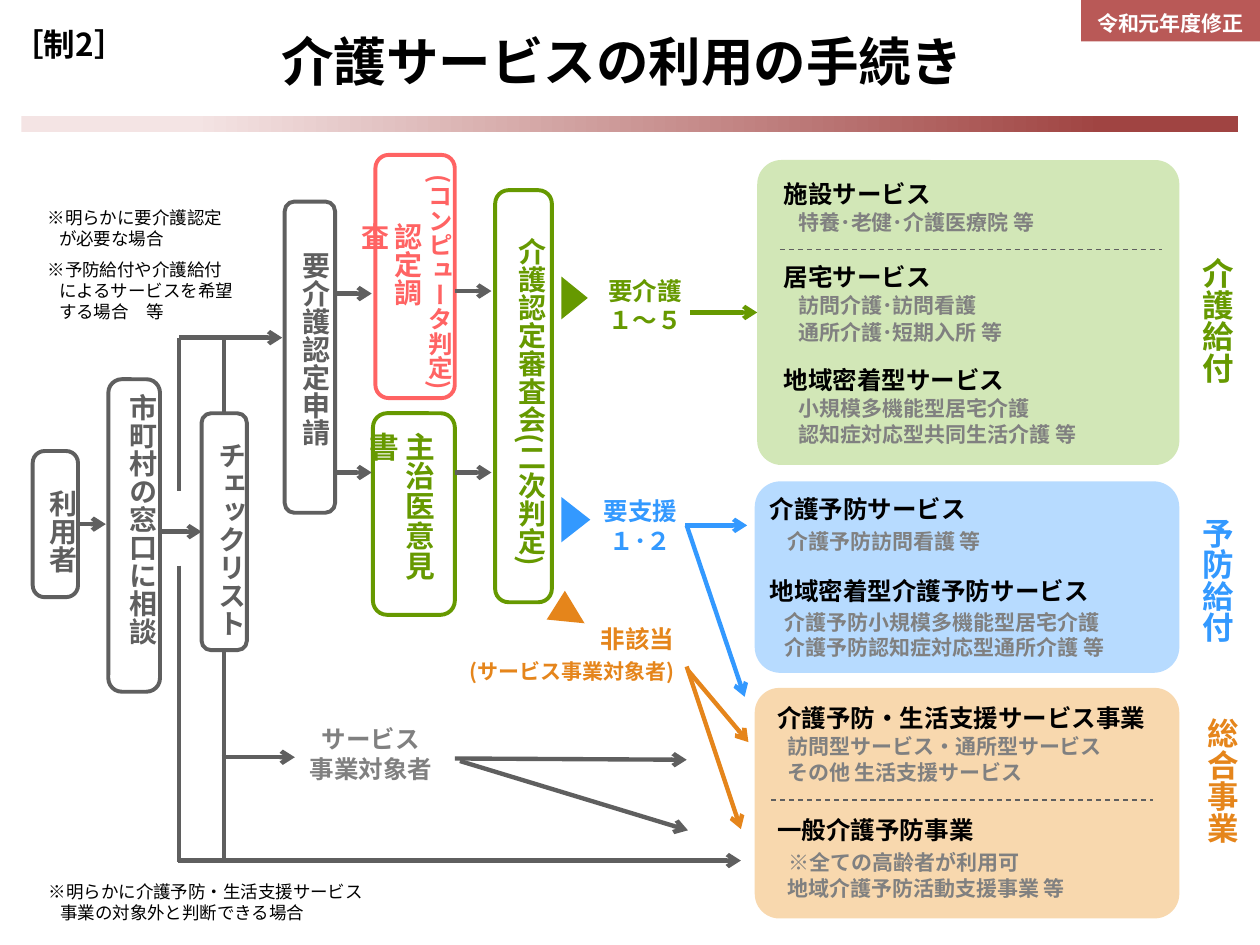
from dataclasses import dataclass

import pptx
import pptx.dml.color
import pptx.enum.dml
import pptx.enum.shapes
import pptx.enum.text
import pptx.oxml.ns
import pptx.oxml.xmlchemy
import pptx.util

SHAPES = pptx.enum.shapes.MSO_SHAPE
ALIGN = pptx.enum.text.PP_ALIGN
Pt = pptx.util.Pt
qn = pptx.oxml.ns.qn
element = pptx.oxml.xmlchemy.OxmlElement


@dataclass(frozen=True)
class Theme:
    font: str = "Noto Sans CJK JP"
    black: str = "000000"
    white: str = "FFFFFF"
    slate: str = "5F5F5F"
    gray: str = "808080"
    green: str = "669900"
    blue: str = "3399FF"
    orange: str = "E5851B"
    red: str = "FF6363"
    pale_green: str = "D2E7B7"
    pale_blue: str = "B7DBFF"
    pale_orange: str = "F8D8AE"
    badge: str = "B95957"
    band_start: str = "F4E4E4"
    band_end: str = "A04442"
    title: int = 30
    label: int = 18
    opinion: int = 17
    step: int = 16
    heading: int = 14
    detail: int = 12
    note: int = 10
    flow: float = 2.5
    outline: float = 2.25
    divider: float = 0.75


class Deck:
    """Draws styled elements on the current slide, in a grid of 100 columns by 75 rows."""

    def __init__(self, theme):
        self.theme = theme
        self.file = pptx.Presentation()
        self.file.slide_width = pptx.util.Inches(10)
        self.file.slide_height = pptx.util.Inches(7.5)
        self.slide = self.file.slides.add_slide(self.file.slide_layouts[6])

    def grid(self, *cells):
        return [round(cell * self.file.slide_width / 100) for cell in cells]

    def color(self, code):
        return pptx.dml.color.RGBColor.from_string(code)

    def shape(self, kind, place, fill=None, line=None, round_by=None, turn=0):
        shape = self.slide.shapes.add_shape(kind, *self.grid(*place))
        shape.shadow.inherit = False
        shape.rotation = turn
        if round_by is not None:
            shape.adjustments[0] = round_by
        if fill:
            shape.fill.solid()
            shape.fill.fore_color.rgb = self.color(fill)
        else:
            shape.fill.background()
        if line:
            shape.line.color.rgb = self.color(line)
            shape.line.width = Pt(self.theme.outline)
        else:
            shape.line.fill.background()
        return shape

    def band(self, place):
        band = self.shape(SHAPES.RECTANGLE, place)
        band.fill.gradient()
        band.fill.gradient_angle = 0
        ends = (0.14, self.theme.band_start), (0.89, self.theme.band_end)
        for stop, (position, code) in zip(band.fill.gradient_stops, ends):
            stop.position = position
            stop.color.rgb = self.color(code)

    def line(self, start, end, color, arrow=True, dashed=False, leaves=None, enters=None):
        line = self.slide.shapes.add_connector(
            pptx.enum.shapes.MSO_CONNECTOR.STRAIGHT, *self.grid(*start, *end))
        if leaves:
            line.begin_connect(*leaves)
        if enters:
            line.end_connect(*enters)
        line.line.color.rgb = self.color(color)
        line.line.width = Pt(self.theme.divider if dashed else self.theme.flow)
        if dashed:
            line.line.dash_style = pptx.enum.dml.MSO_LINE.DASH
        properties = line._element.spPr
        if arrow:
            tail = element("a:tailEnd")
            tail.set("type", "arrow")
            properties.find(qn("a:ln")).append(tail)
        properties.append(element("a:effectLst"))

    def paragraph(self, paragraph, words, size, color, bold=True, align=None,
                  before=None, percent=None, after=None, indent=0, spacing=None):
        paragraph.alignment = align
        paragraph.line_spacing = spacing
        if before is not None or percent:
            paragraph.space_before = Pt(before or 0)
        if after is not None:
            paragraph.space_after = Pt(after)
        properties = paragraph._p.get_or_add_pPr()
        if percent:
            gap = properties.find(qn("a:spcBef"))
            gap.remove(gap[0])
            share = element("a:spcPct")
            share.set("val", str(percent * 1000))
            gap.append(share)
        if indent:
            properties.set("marL", str(self.grid(indent)[0]))
            properties.set("indent", "0")
        run = paragraph.add_run()
        run.text = words
        run.font.size = Pt(size)
        run.font.bold = bold
        run.font.color.rgb = self.color(color)
        run.font.name = self.theme.font
        east = element("a:ea")
        east.set("typeface", self.theme.font)
        run._r.get_or_add_rPr().append(east)

    def text(self, place, lines, vertical=False, grow=True, **style):
        frame = self.slide.shapes.add_textbox(*self.grid(*place)).text_frame
        frame.word_wrap = True
        if vertical:
            frame._txBody.bodyPr.set("vert", "eaVert")
        if grow:
            frame.auto_size = pptx.enum.text.MSO_AUTO_SIZE.SHAPE_TO_FIT_TEXT
        else:
            frame.vertical_anchor = pptx.enum.text.MSO_ANCHOR.MIDDLE
        for number, (words, own) in enumerate(lines):
            paragraph = frame.add_paragraph() if number else frame.paragraphs[0]
            self.paragraph(paragraph, words, **{**style, **own})

    def tall(self, place, words, size, color, **style):
        self.text(place, [(words, {})], vertical=True, size=size, color=color,
                  **(style or {"percent": 50}))

    def tag(self, place, words):
        tag = self.shape(SHAPES.RECTANGLE, place, self.theme.badge)
        frame = tag.text_frame
        frame.margin_left = frame.margin_right = self.grid(0.8)[0]
        frame.margin_top = frame.margin_bottom = self.grid(0.4)[0]
        frame.vertical_anchor = pptx.enum.text.MSO_ANCHOR.MIDDLE
        self.paragraph(frame.paragraphs[0], words, self.theme.detail, self.theme.white,
                       align=ALIGN.CENTER, spacing=Pt(16.8))


def head(words, **gap):
    return words, {"size": THEME.heading, "color": THEME.black, **(gap or {"percent": 5})}


def item(words, indent=1.2, **gap):
    return words, {"size": THEME.detail, "color": THEME.gray, "indent": indent,
                   **(gap or {"percent": 5})}


def main():
    t, deck = THEME, Deck(THEME)
    deck.text((4.4, 1.7, 90, 6.2), [("介護サービスの利用の手続き", {})], grow=False,
              size=t.title, color=t.black, align=ALIGN.CENTER)
    deck.band((1.7, 9.2, 96.6, 1.3))
    deck.text((0, 0, 13.1, 5.6), [("［制2］", {})], size=t.label, color=t.black, spacing=1.5)
    deck.tag((85.8, 0, 14.2, 3.3), "令和元年度修正")

    care, prevention, general = [
        deck.shape(SHAPES.ROUNDED_RECTANGLE, place, fill, round_by=curve)
        for place, fill, curve in (
            ((60.1, 12.7, 33.5, 24.2), t.pale_green, 0.079),
            ((59.9, 38.2, 33.7, 15.2), t.pale_blue, 0.134),
            ((59.9, 54.6, 33.7, 18.3), t.pale_orange, 0.107))]
    user, window, checklist, application, survey, opinion, board = [
        deck.shape(SHAPES.ROUNDED_RECTANGLE, place, line=color, round_by=curve)
        for place, color, curve in (
            ((2.6, 35.8, 3.6, 11.6), t.slate, 0.262),
            ((8.6, 30.1, 4.1, 24.8), t.slate, 0.261),
            ((16, 32.8, 3.6, 18.8), t.slate, 0.208),
            ((22.6, 16, 4, 24.7), t.slate, 0.191),
            ((29.8, 12.3, 6.3, 19.3), t.red, 0.166),
            ((29.6, 32.8, 6.5, 16), t.green, 0.173),
            ((39.3, 15.1, 4.5, 32.7), t.green, 0.237))]

    deck.tall((2.1, 37.9, 4.7, 9.7), "利用者", t.step, t.slate)
    deck.tall((8.4, 30.3, 4.7, 24.7), "市町村の窓口に相談", t.step, t.slate,
              percent=50, align=ALIGN.CENTER)
    deck.tall((15.5, 34.1, 4.7, 17.8), "チェックリスト", t.step, t.slate)
    deck.tall((22.2, 19, 4.7, 17.7), "要介護認定申請", t.step, t.slate)
    deck.tall((30.3, 33.3, 4.9, 15.8), "主治医意見書", t.opinion, t.green)
    deck.tall((32.2, 12.9, 4.4, 19.8), "(コンピュータ判定)", t.heading, t.red)
    deck.tall((29.5, 16.7, 4.7, 10.4), "認定調査", t.step, t.red)
    deck.tall((39.3, 17.9, 4.7, 29.7), "介護認定審査会(二次判定)", t.step, t.green)
    deck.tall((93.6, 19.5, 5, 12.7), "介護給付", t.label, t.green)
    deck.tall((93.6, 40.1, 5, 13), "予防給付", t.label, t.blue)
    deck.tall((93.9, 56, 4.9, 14.5), "総合事業", t.label, t.orange,
              align=ALIGN.CENTER, spacing=0.95)

    for place, names, color in (
            ((46.6, 21.4, 9.2, 5.7), ("要介護", "１～５"), t.green),
            ((45.5, 38.9, 10.7, 5.7), ("要支援", "１･２"), t.blue),
            ((22.8, 57, 13.3, 5.7), ("サービス", "事業対象者"), t.gray)):
        deck.text(place, [(name, {}) for name in names], size=t.heading, color=color,
                  align=ALIGN.CENTER)
    deck.text((35.3, 49, 19.2, 5.8),
              [("非該当", {"after": 3}), ("(サービス事業対象者)", {"size": t.detail})],
              size=t.heading, color=t.orange, align=ALIGN.RIGHT)
    for place, color, turn in (((43.9, 22.6, 3.4, 2.1), t.green, 90),
                               ((43.9, 40.1, 3.6, 2.3), t.blue, 90),
                               ((43.9, 47.4, 2.7, 2.7), t.orange, 122.3)):
        deck.shape(SHAPES.ISOSCELES_TRIANGLE, place, color, turn=turn)

    deck.text((61.2, 13.7, 30.3, 22.6), [
        head("施設サービス"), item("特養･老健･介護医療院 等"),
        head("居宅サービス", before=16), item("訪問介護･訪問看護"), item("通所介護･短期入所 等"),
        head("地域密着型サービス", before=12), item("小規模多機能型居宅介護"),
        item("認知症対応型共同生活介護 等")])
    deck.text((60.1, 38.7, 33.5, 14.2), [
        head("介護予防サービス"), item("介護予防訪問看護 等", 1.4, before=3),
        head("地域密着型介護予防サービス", before=13),
        item("介護予防小規模多機能型居宅介護", before=2),
        item("介護予防認知症対応型通所介護 等", before=0)])
    deck.text((60.7, 55.3, 33.5, 17), [
        head("介護予防・生活支援サービス事業"), item("訪問型サービス・通所型サービス", 0.8),
        item("その他 生活支援サービス", 0.8),
        head("一般介護予防事業", before=17), item("※全ての高齢者が利用可", 0.9, before=3),
        item("地域介護予防活動支援事業 等", 0.8)])
    for left, row in ((61.9, 19.8), (61.2, 63.5)):
        deck.line((left, row), (left + 30.3, row), t.slate, arrow=False, dashed=True)

    inner = {"indent": 0.9}
    deck.text((2.8, 15.9, 19.1, 10.3), [
        ("※明らかに要介護認定", {}), ("が必要な場合", inner),
        ("※予防給付や介護給付", {"before": 6}), ("によるサービスを希望", inner),
        ("する場合　等", inner)], size=t.note, color=t.black, bold=False)
    deck.text((2.9, 69.4, 29.3, 4.4), [
        ("※明らかに介護予防・生活支援サービス", {}), ("事業の対象外と判断できる場合", inner)],
        size=t.note, color=t.black, bold=False)

    deck.line((6.2, 41.6), (8.4, 41.6), t.slate, leaves=(user, 3))
    deck.line((12.7, 42.2), (16, 42.2), t.slate, enters=(checklist, 1))
    deck.line((17.8, 26.9), (17.8, 32.8), t.slate, arrow=False, enters=(checklist, 0))
    deck.line((17.8, 51.6), (17.8, 68.3), t.slate, arrow=False, leaves=(checklist, 2))
    deck.line((54.8, 24.8), (60.1, 24.8), t.green, enters=(care, 1))
    for top, bottom in ((26.8, 39), (44.9, 68.4)):
        deck.line((14.2, top), (14.2, bottom), t.slate, arrow=False)
    for left, row in ((26.6, 23.3), (26.6, 37.5), (36.1, 23.1), (36.1, 37.5)):
        deck.line((left, row), (left + 2.9, row), t.slate)
    for start, end, color in (
            ((14.2, 26.8), (22.4, 26.8), t.slate), ((17.6, 60.1), (23.4, 60.1), t.slate),
            ((14.1, 68.3), (58.8, 68.3), t.slate), ((36.1, 60.2), (54.5, 60.3), t.slate),
            ((36.5, 60.4), (54.6, 65.9), t.slate), ((54.4, 41.7), (59.3, 41.7), t.blue),
            ((54.5, 41.7), (59.1, 55.3), t.blue), ((54.6, 53.2), (59.4, 58.9), t.orange),
            ((54.5, 52.9), (58.8, 65.8), t.orange)):
        deck.line(start, end, color)
    deck.file.save("out.pptx")


THEME = Theme()

if __name__ == "__main__":
    main()
